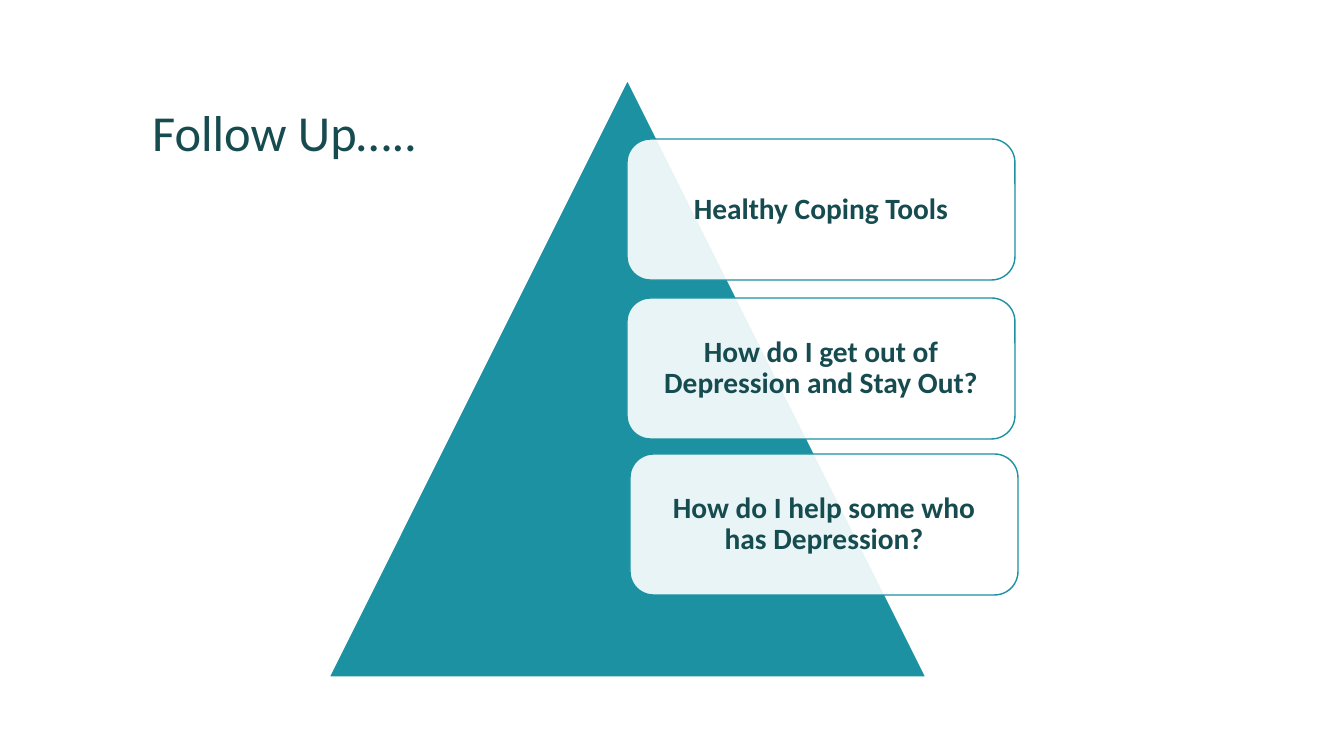
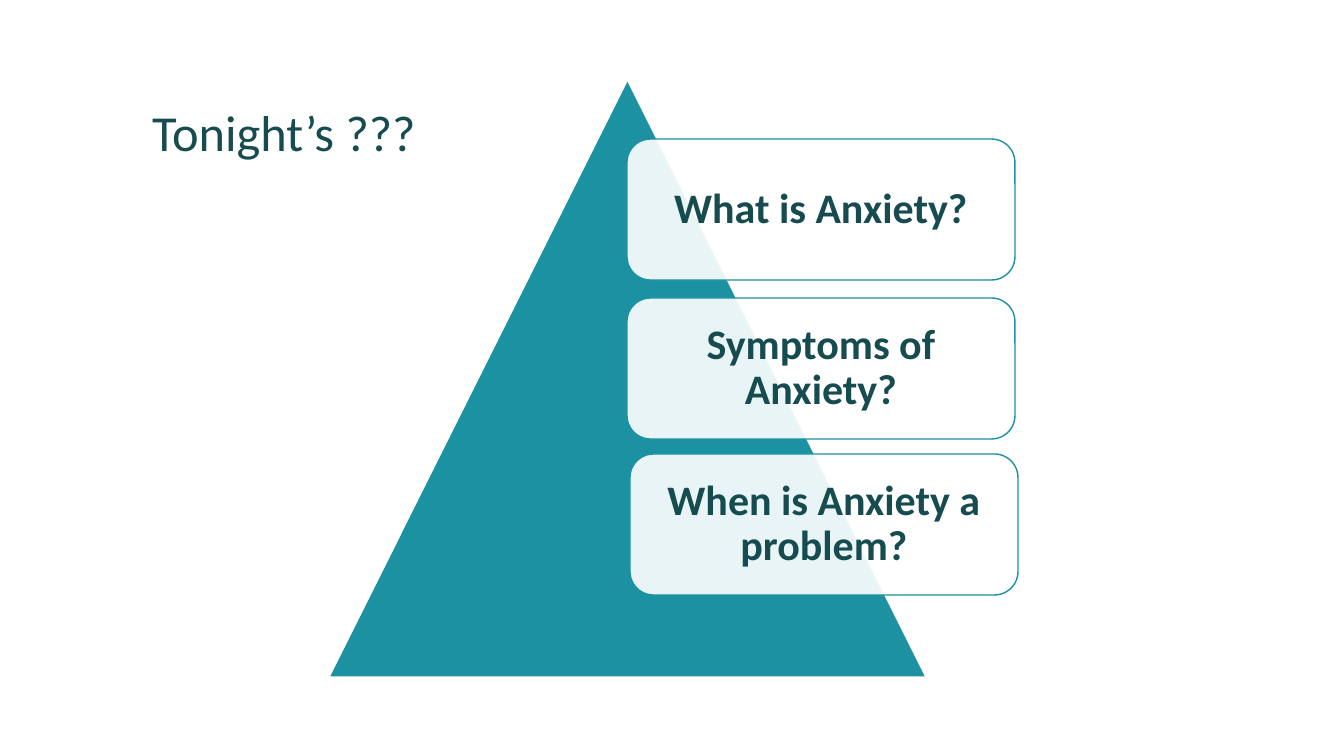
from dataclasses import dataclass

from lxml import etree
from pptx import Presentation
from pptx.dml.color import RGBColor
from pptx.enum import shapes, text
from pptx.oxml import ns
from pptx.util import Inches, Pt


@dataclass(frozen=True)
class Theme:
    font: str = "Calibri"
    ink: str = "164B4F"
    teal: str = "1B91A1"
    white: str = "FFFFFF"
    title: int = 36
    line: int = 1
    leading: float = 0.9
    opacity: int = 90


def px(n):
    return Inches(n / 100.8)


def rgb(code):
    return RGBColor.from_string(code)


class Deck:
    def __init__(self, theme):
        self.theme = theme
        self.prs = Presentation()
        self.prs.slide_width, self.prs.slide_height = px(1344), px(756)
        self.slide = None

    def label(self, frame, words, size, align, anchor, bold=False):
        frame.text = words
        frame.word_wrap = True
        frame.auto_size = text.MSO_AUTO_SIZE.NONE
        frame.vertical_anchor = anchor
        para = frame.paragraphs[0]
        para.alignment = align
        para.line_spacing = self.theme.leading
        font = para.runs[0].font
        font.name, font.size, font.bold = self.theme.font, Pt(size), bold
        font.color.rgb = rgb(self.theme.ink)

    def start(self, title):
        """Add a slide with its title."""
        self.slide = self.prs.slides.add_slide(self.prs.slide_layouts[5])
        head = self.slide.shapes.title
        head.left, head.top, head.width, head.height = map(px, (142, 42, 1058, 126))
        self.label(head.text_frame, title, self.theme.title,
                   text.PP_ALIGN.LEFT, text.MSO_ANCHOR.BOTTOM)

    def shape(self, kind, area, fill, line):
        item = self.slide.shapes.add_shape(kind, *map(px, area))
        item.shadow.inherit = False
        item.fill.solid()
        item.fill.fore_color.rgb = rgb(fill)
        item.line.color.rgb = rgb(line)
        item.line.width = Pt(self.theme.line)
        return item

    def peak(self):
        self.shape(shapes.MSO_SHAPE.ISOSCELES_TRIANGLE, (329, 80, 597, 597),
                   self.theme.teal, self.theme.white)

    def card(self, left, top, words, size, inset):
        """Add a see-through rounded box with centred bold text."""
        box = self.shape(shapes.MSO_SHAPE.ROUNDED_RECTANGLE, (left, top, 388, 141),
                         self.theme.white, self.theme.teal)
        tint = box.element.spPr.find(ns.qn("a:solidFill")).find(ns.qn("a:srgbClr"))
        etree.SubElement(tint, ns.qn("a:alpha"), val=str(self.theme.opacity * 1000))
        frame = box.text_frame
        frame.margin_left = frame.margin_right = px(inset)
        frame.margin_top = frame.margin_bottom = px(inset)
        self.label(frame, words, size, text.PP_ALIGN.CENTER,
                   text.MSO_ANCHOR.MIDDLE, bold=True)


SPOTS = [(627, 139), (627, 298), (630, 454)]
PAGES = [
    ("Follow Up…..", 21, 16, [
        "Healthy Coping Tools",
        "How do I get out of Depression and Stay Out?",
        "How do I help some who has Depression?",
    ]),
    ("Tonight’s ???", 30, 19, [
        "What is Anxiety?",
        "Symptoms of Anxiety?",
        "When is Anxiety a problem?",
    ]),
]


def main():
    deck = Deck(Theme())
    for title, size, inset, cards in PAGES:
        deck.start(title)
        deck.peak()
        for (left, top), words in zip(SPOTS, cards):
            deck.card(left, top, words, size, inset)
    deck.prs.save("out.pptx")


if __name__ == "__main__":
    main()
